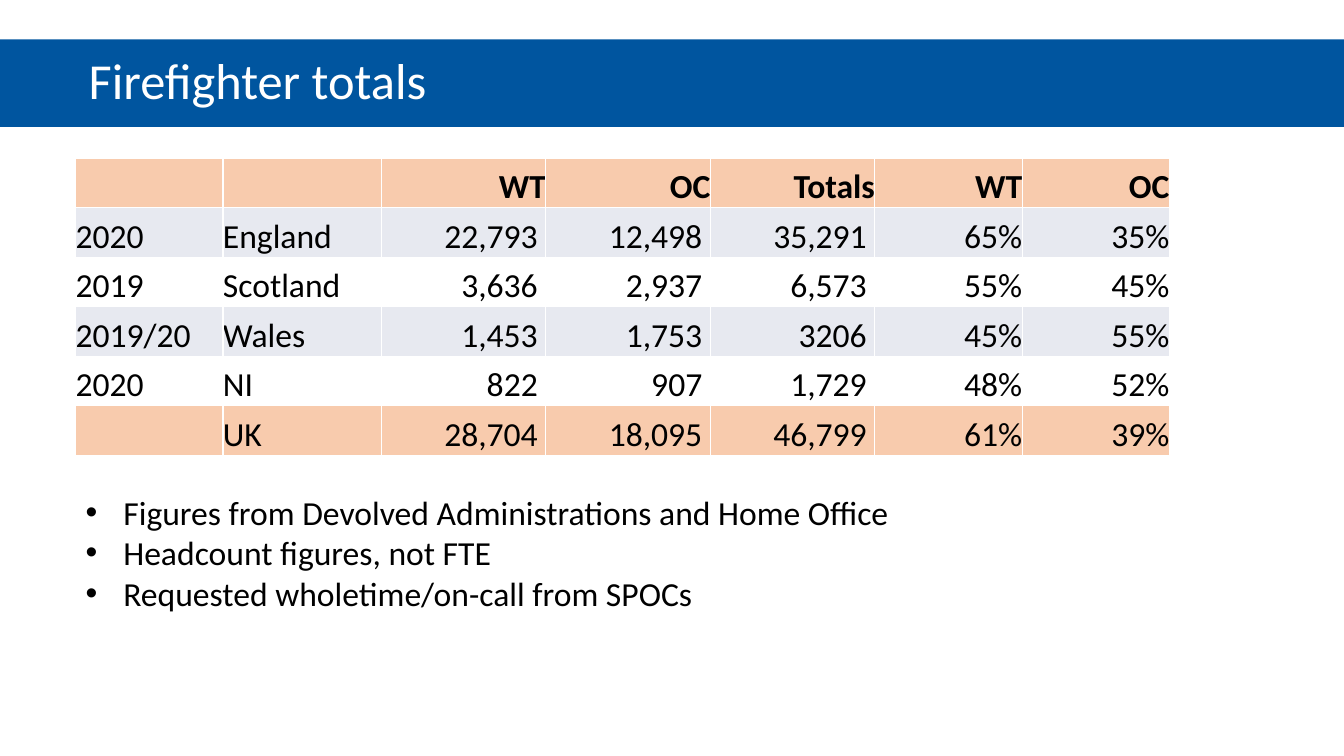
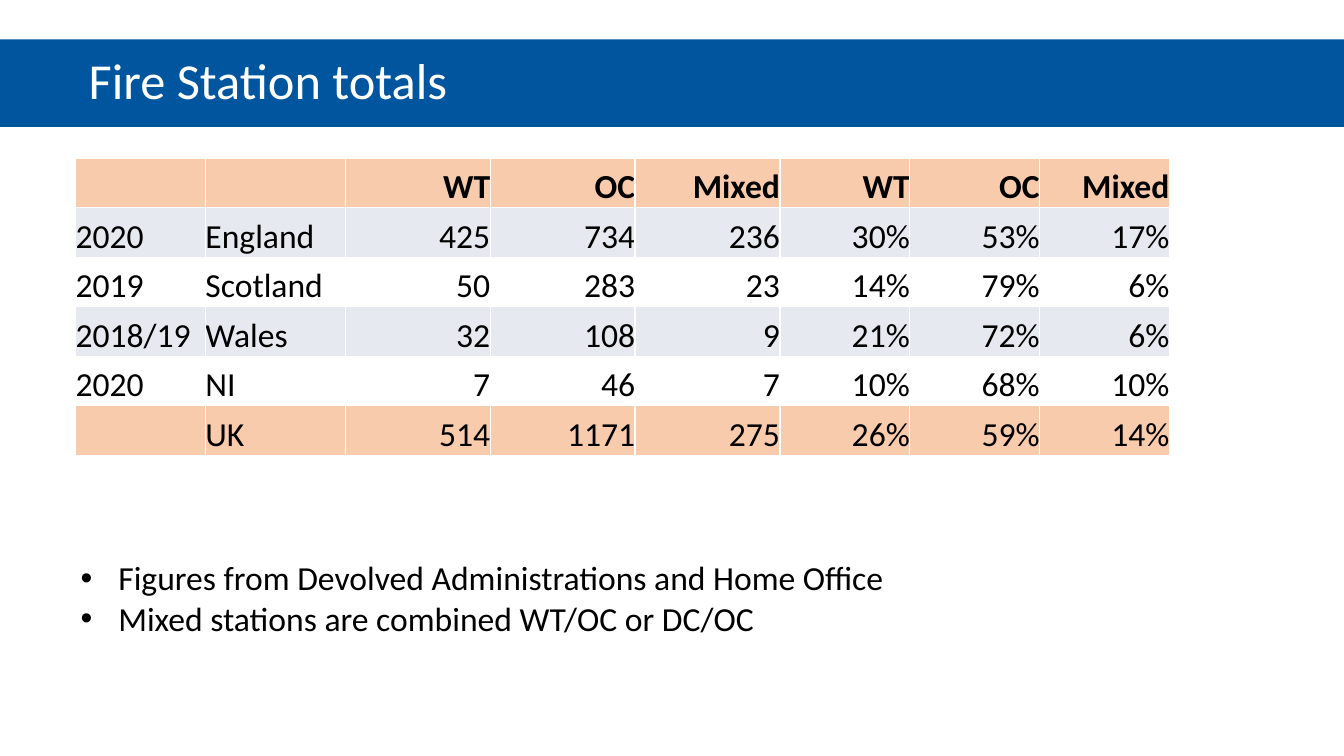
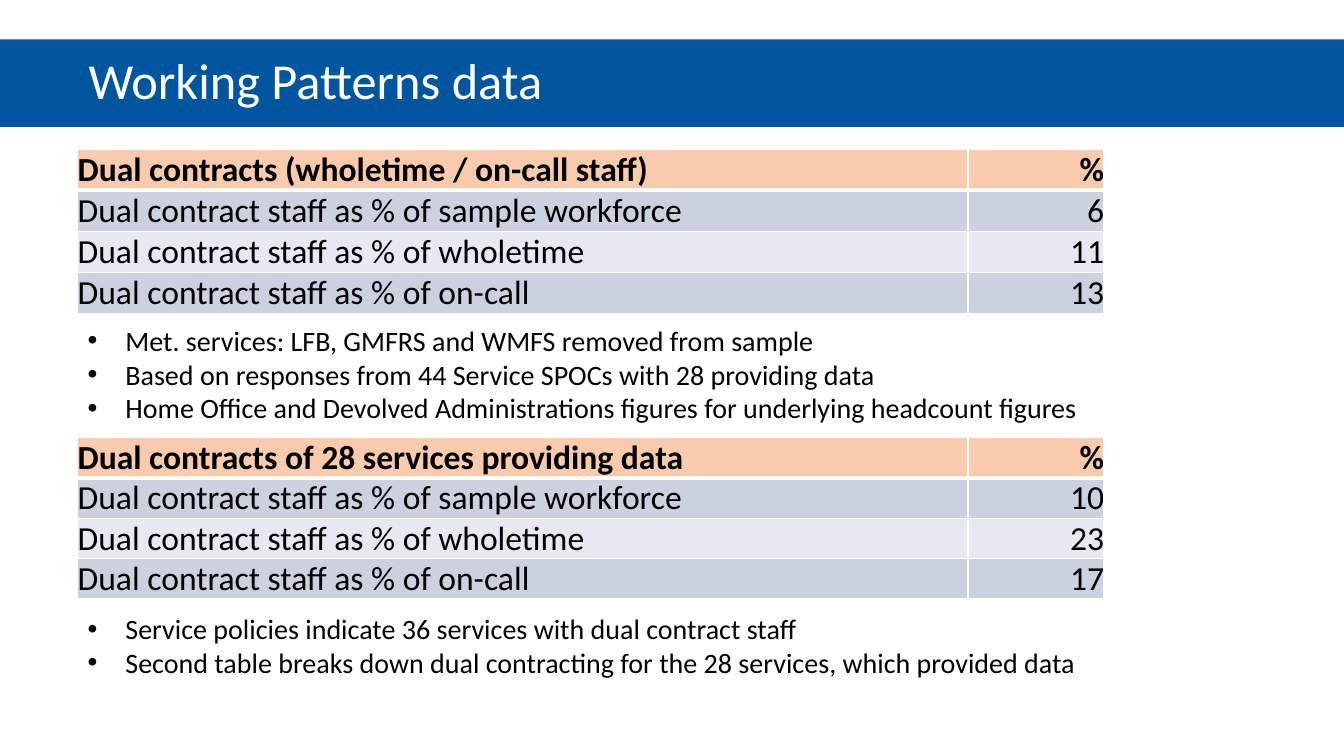
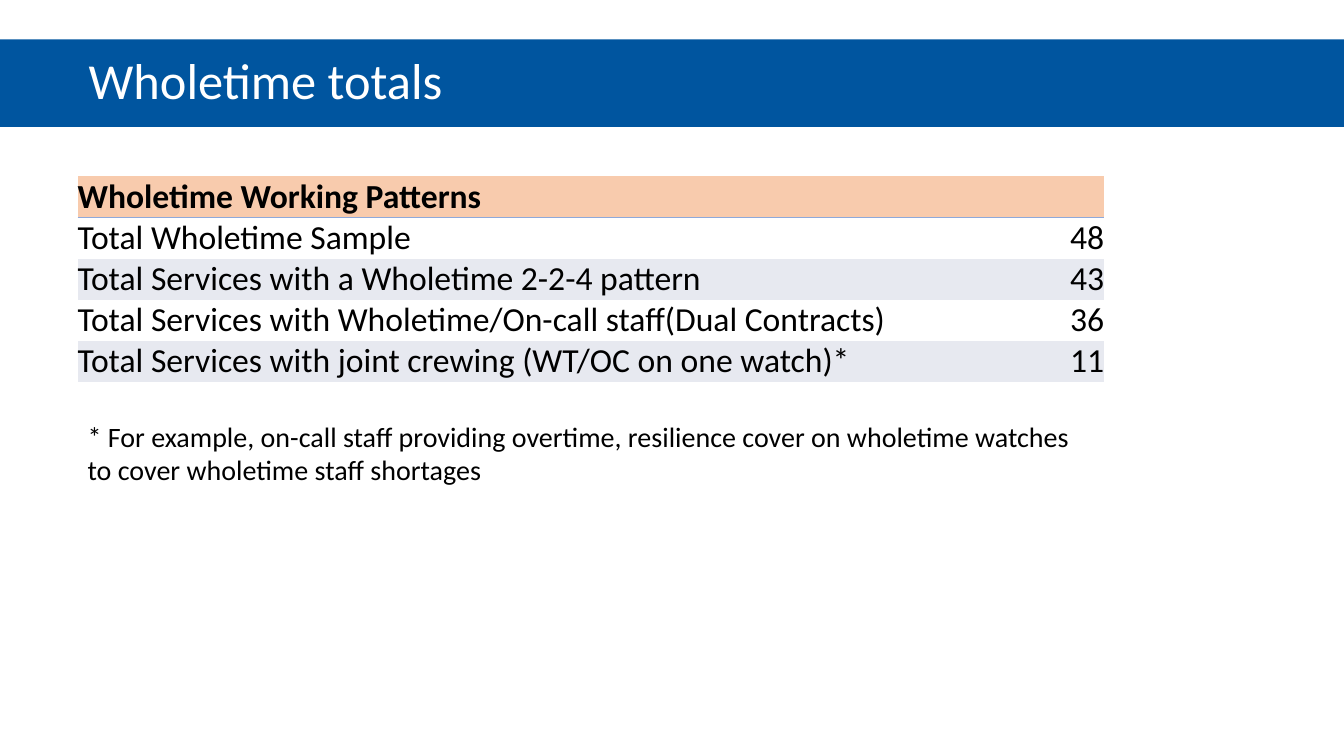
"""Builds four slides of firefighter, fire station and working pattern figures."""
from lxml import etree
from pptx import Presentation
from pptx.dml.color import RGBColor
from pptx.enum import shapes, text
from pptx.oxml import ns
from pptx.util import Inches, Pt

COLOURS = {"band": "00559F", "white": "FFFFFF", "black": "000000", "head": "F8CBAD",
           "pale": "E7E9F0", "grey": "CCD1DF", "rule": "8EA9DB"}
FONT = "Calibri"
BULLET_INDENT = Pt(27)
DUAL_COLUMNS = [8.83, 1.35]
COUNTRY_FILLS = ["head", "pale", None, "pale", None, "head"]
DUAL_FILLS = ["head", "grey", "pale", "grey"]
WHITE_GRID = ("white", 1)
SOURCE_LINE = "Figures from Devolved Administrations and Home Office"


def set_font(paragraph, size, colour="black", bold=False):
    font = paragraph.font
    font.name, font.size, font.bold = FONT, Pt(size), bold
    font.color.rgb = RGBColor.from_string(COLOURS[colour])


def add_border(cell, side, line):
    properties = cell._tc.get_or_add_tcPr()
    border = etree.SubElement(properties, ns.qn("a:ln" + side))
    if line is None:
        etree.SubElement(border, ns.qn("a:noFill"))
        return
    colour, width = line
    border.set("w", str(Pt(width)))
    fill = etree.SubElement(border, ns.qn("a:solidFill"))
    etree.SubElement(fill, ns.qn("a:srgbClr"), val=COLOURS[colour])


contents = [
    {
        "title": "Firefighter totals",
        "tables": [{
            "at": (0.75, 1.57, 10.85, 2.95),
            "columns": [1.46, 1.57, 1.63, 1.63, 1.63, 1.46, 1.46],
            "labels": 2, "padded": range(2, 5), "fills": COUNTRY_FILLS,
            "grid": WHITE_GRID, "under_head": WHITE_GRID,
            "cells": [
                ["", "", "WT", "OC", "Totals", "WT", "OC"],
                ["2020", "England", "22,793", "12,498", "35,291", "65%", "35%"],
                ["2019", "Scotland", "3,636", "2,937", "6,573", "55%", "45%"],
                ["2019/20", "Wales", "1,453", "1,753", "3206", "45%", "55%"],
                ["2020", "NI", "822", "907", "1,729", "48%", "52%"],
                ["", "UK", "28,704", "18,095", "46,799", "61%", "39%"],
            ],
        }],
        "remarks": [{
            "at": (0.75, 4.83, 8.25, 1.31), "size": 24, "bullets": True,
            "lines": [SOURCE_LINE, "Headcount figures, not FTE",
                      "Requested wholetime/on-call from SPOCs"],
        }],
    },
    {
        "title": "Fire Station totals",
        "tables": [{
            "at": (0.75, 1.57, 10.85, 2.95),
            "columns": [1.29, 1.39, 1.44, 1.44, 1.44, 1.29, 1.29, 1.29],
            "labels": 2, "padded": (), "fills": COUNTRY_FILLS,
            "grid": WHITE_GRID, "under_head": WHITE_GRID,
            "cells": [
                ["", "", "WT", "OC", "Mixed", "WT", "OC", "Mixed"],
                ["2020", "England", "425", "734", "236", "30%", "53%", "17%"],
                ["2019", "Scotland", "50", "283", "23", "14%", "79%", "6%"],
                ["2018/19", "Wales", "32", "108", "9", "21%", "72%", "6%"],
                ["2020", "NI", "7", "46", "7", "10%", "68%", "10%"],
                ["", "UK", "514", "1171", "275", "26%", "59%", "14%"],
            ],
        }],
        "remarks": [{
            "at": (0.7, 5.48, 8.25, 0.91), "size": 24, "bullets": True,
            "lines": [SOURCE_LINE, "Mixed stations are combined WT/OC or DC/OC"],
        }],
    },
    {
        "title": "Working Patterns data",
        "tables": [{
            "at": (0.77, top, 10.18, height), "columns": DUAL_COLUMNS, "labels": 1,
            "padded": (), "fills": DUAL_FILLS, "grid": WHITE_GRID, "under_head": ("white", 3),
            "cells": [[heading, "%"]] + [
                ["Dual contract staff as % of " + group, share]
                for group, share in zip(("sample workforce", "wholetime", "on-call"), shares)],
        } for top, height, heading, shares in (
            (1.48, 1.63, "Dual contracts (wholetime / on-call staff)", ("6", "11", "13")),
            (4.34, 1.6, "Dual contracts of 28 services providing data", ("10", "23", "17")))],
        "remarks": [{
            "at": (0.77, 3.16, 10.18, 1.11), "size": 20, "bullets": True,
            "lines": ["Met. services: LFB, GMFRS and WMFS removed from sample",
                      "Based on responses from 44 Service SPOCs with 28 providing data",
                      "Home Office and Devolved Administrations figures for underlying "
                      "headcount figures"],
        }, {
            "at": (0.77, 6.02, 10.18, 0.77), "size": 20, "bullets": True,
            "lines": ["Service policies indicate 36 services with dual contract staff",
                      "Second table breaks down dual contracting for the 28 services, "
                      "which provided data"],
        }],
    },
    {
        "title": "Wholetime totals",
        "tables": [{
            "at": (0.77, 1.75, 10.18, 2.04), "columns": DUAL_COLUMNS, "labels": 1,
            "padded": (), "fills": ["head", None, "pale", None, "pale"],
            "grid": None, "under_head": ("rule", 0.5),
            "cells": [
                ["Wholetime Working Patterns", ""],
                ["Total Wholetime Sample", "48"],
                ["Total Services with a Wholetime 2-2-4 pattern", "43"],
                ["Total Services with Wholetime/On-call staff(Dual Contracts)", "36"],
                ["Total Services with joint crewing (WT/OC on one watch)*", "11"],
            ],
        }],
        "remarks": [{
            "at": (0.77, 4.11, 10.18, 0.77), "size": 20, "bullets": False,
            "lines": ["* For example, on-call staff providing overtime, resilience cover on "
                      "wholetime watches to cover wholetime staff shortages"],
        }],
    },
]

deck = Presentation()
deck.slide_width, deck.slide_height = Inches(13.33), Inches(7.5)

for content in contents:
    page = deck.slides.add_slide(deck.slide_layouts[6])

    band = page.shapes.add_shape(shapes.MSO_SHAPE.RECTANGLE, 0, Inches(0.39),
                                 deck.slide_width, Inches(0.87))
    band.shadow.inherit = False
    band.fill.solid()
    band.fill.fore_color.rgb = RGBColor.from_string(COLOURS["band"])
    band.line.fill.background()
    band.text_frame.margin_left = Inches(0.88)
    band.text_frame.vertical_anchor = text.MSO_ANCHOR.MIDDLE
    title = band.text_frame.paragraphs[0]
    title.text = content["title"]
    title.alignment = text.PP_ALIGN.LEFT
    title.line_spacing = 0.9
    set_font(title, 36, "white")

    for layout in content["tables"]:
        rows, shares = layout["cells"], layout["columns"]
        left, top, width, height = map(Inches, layout["at"])
        table = page.shapes.add_table(len(rows), len(shares), left, top, width, height).table
        table.first_row = table.horz_banding = False
        for column, share in zip(table.columns, shares):
            column.width = int(width * share / sum(shares))
        for row_index, values in enumerate(rows):
            fill = layout["fills"][row_index]
            for column_index, value in enumerate(values):
                cell = table.cell(row_index, column_index)
                cell.margin_left = cell.margin_top = cell.margin_bottom = 0
                padded = row_index > 0 and column_index in layout["padded"]
                cell.margin_right = Inches(0.08 if padded else 0)
                cell.vertical_anchor = text.MSO_ANCHOR.BOTTOM
                for side in "LRTB":
                    beside_head = (row_index, side) in ((0, "B"), (1, "T"))
                    add_border(cell, side, layout["under_head" if beside_head else "grid"])
                if fill:
                    cell.fill.solid()
                    cell.fill.fore_color.rgb = RGBColor.from_string(COLOURS[fill])
                else:
                    cell.fill.background()
                if value:
                    entry = cell.text_frame.paragraphs[0]
                    entry.text = value
                    if column_index >= layout["labels"]:
                        entry.alignment = text.PP_ALIGN.RIGHT
                    set_font(entry, 24, bold=row_index == 0)

    for remark in content["remarks"]:
        box = page.shapes.add_textbox(*map(Inches, remark["at"]))
        frame = box.text_frame
        frame.word_wrap = True
        frame.auto_size = text.MSO_AUTO_SIZE.SHAPE_TO_FIT_TEXT
        for index, line in enumerate(remark["lines"]):
            paragraph = frame.add_paragraph() if index else frame.paragraphs[0]
            paragraph.text = line
            if remark["bullets"]:
                properties = paragraph._p.get_or_add_pPr()
                properties.set("marL", str(BULLET_INDENT))
                properties.set("indent", str(-BULLET_INDENT))
                etree.SubElement(properties, ns.qn("a:buFont"), typeface="Arial")
                etree.SubElement(properties, ns.qn("a:buChar"), char="•")
            set_font(paragraph, remark["size"])

deck.save("out.pptx")
